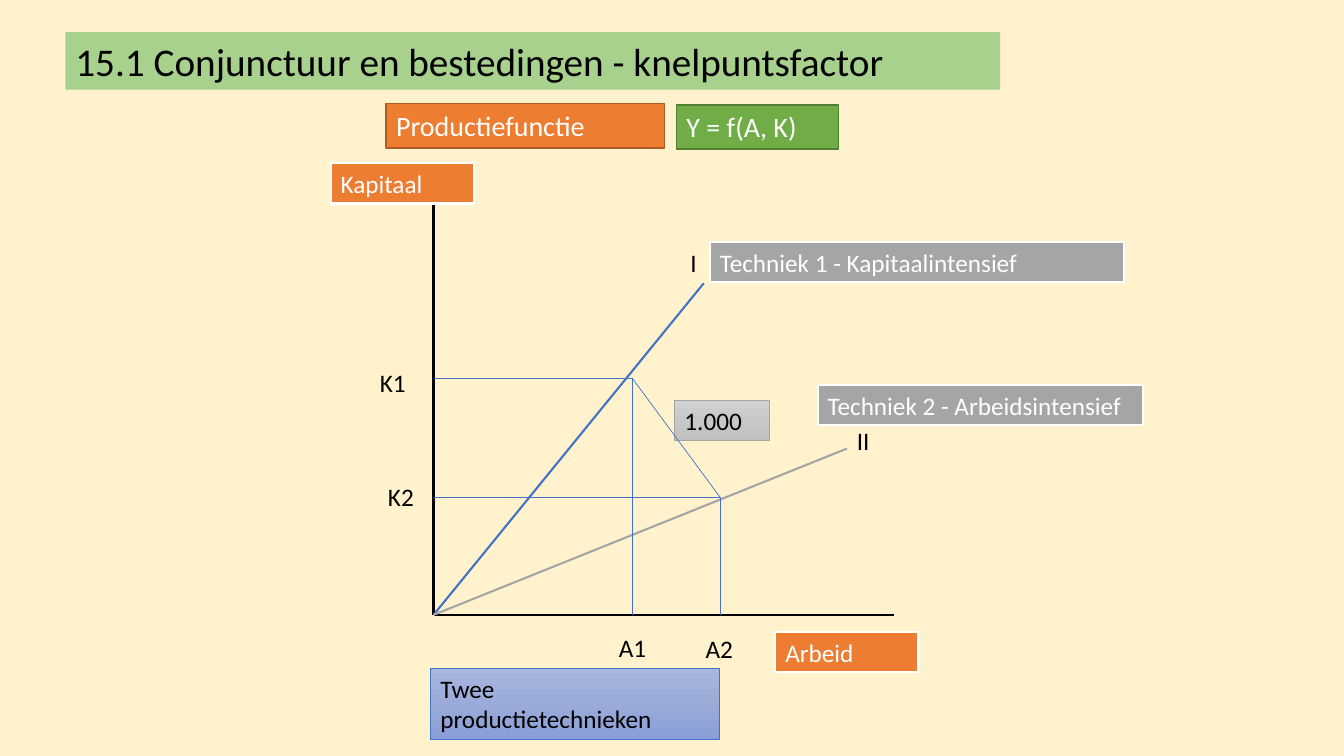
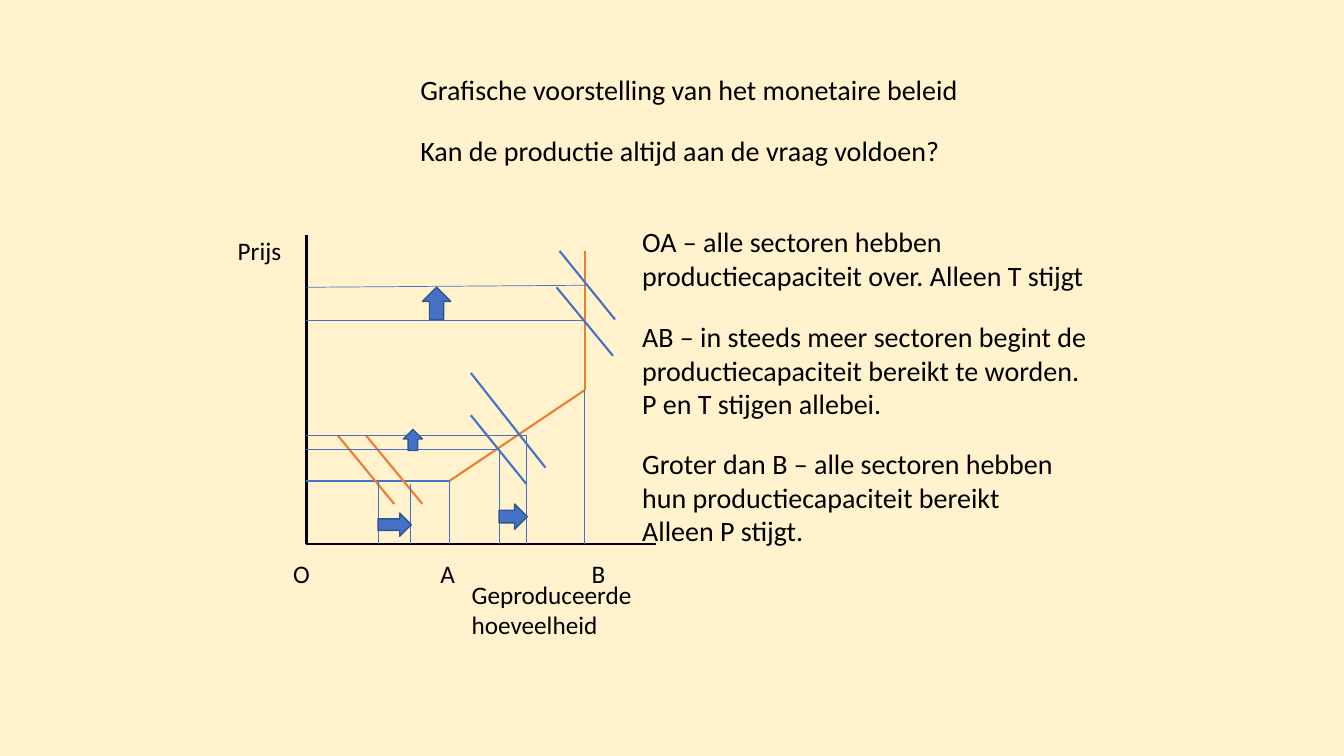
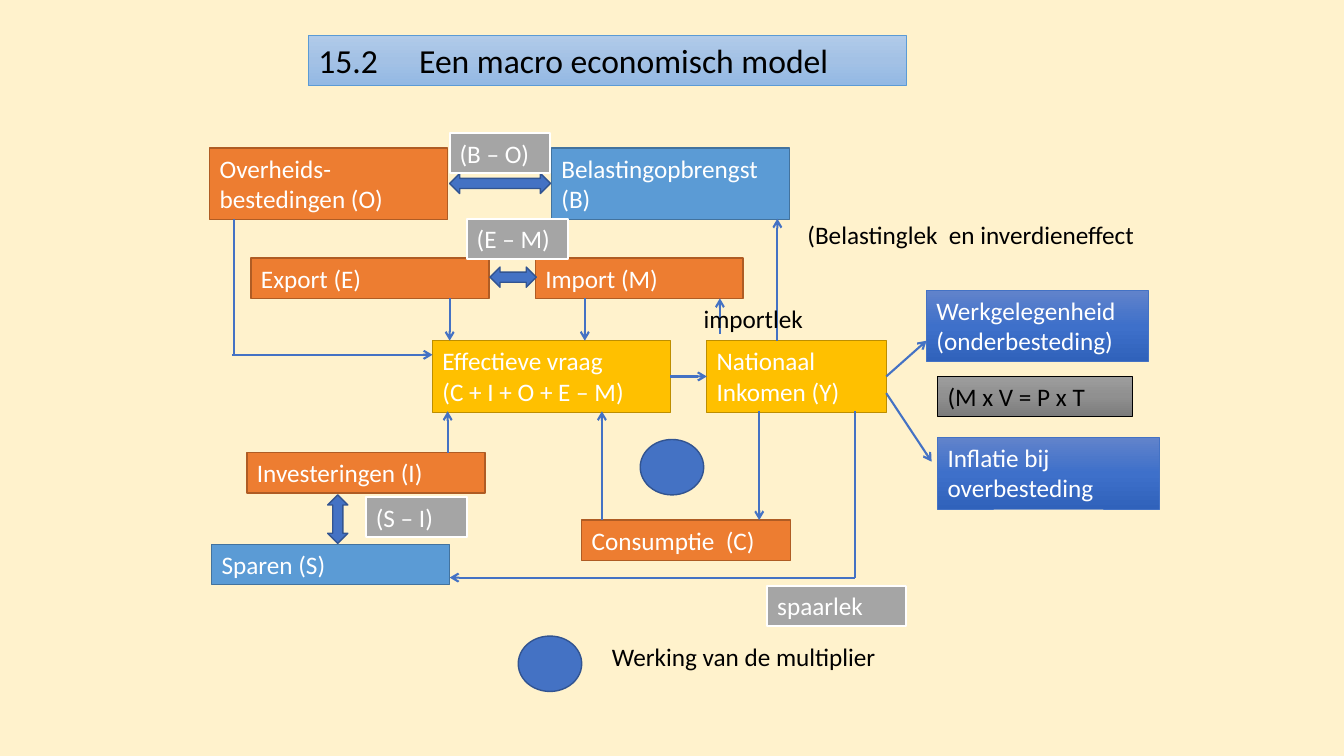
from copy import deepcopy
from pptx import Presentation
from pptx.dml.color import RGBColor
from pptx.enum.shapes import MSO_CONNECTOR, MSO_SHAPE
from pptx.enum.text import MSO_ANCHOR, MSO_AUTO_SIZE, PP_ALIGN
from pptx.oxml.ns import qn
from pptx.util import Inches, Pt
from lxml.etree import SubElement

FONT = "Calibri"
BLACK, WHITE, BLUE, ORANGE, GREY = "000000", "FFFFFF", "4472C4", "ED7D31", "A5A5A5"
PLAIN = (None, None, 0, BLACK)
ACTION = (ORANGE, "AF5C24", 1, WHITE)
AXIS = (ORANGE, WHITE, 1.5, WHITE)
LABEL = (GREY, WHITE, 1.5, WHITE)
FUNCTION = ("70AD47", "538035", 1, WHITE)
TITLE = ("A9D18E", None, 0, BLACK)
CORE = ("FFC000", "BD8E00", 1, WHITE)
FLOW = ("5B9BD5", "43739E", 1, WHITE)
MARK = (BLUE, "325491", 1, WHITE)
SOFT = (("A8B7DF", "9AABD9", "889ED7"), BLUE, 0.5, BLACK)
SILVER = (("D2D2D2", "C8C8C8", "C0C0C0"), GREY, 0.5, BLACK)
BANNER = (("B1CBE9", "A3C1E5", "93B9E4"), "5B9BD5", 0.5, BLACK)
RESULT = (("6183CB", "3E70CA", "3062BB"), BLUE, 0.5, WHITE)
FORMULA = (("9D9D9D", "909090", "7C7C7C"), BLACK, 0.5, BLACK)


def box(page, at, style, text="", size=18, kind=MSO_SHAPE.RECTANGLE):
    fill, edge, width, ink = style
    place = [Inches(v) for v in at]
    if fill is None:
        item = page.shapes.add_textbox(*place)
    else:
        item = page.shapes.add_shape(kind, *place)
        item.shadow.inherit = False
        if isinstance(fill, tuple):
            item.fill.gradient()
            item.fill.gradient_angle = 270
            stops = item._element.spPr.find(".//" + qn("a:gsLst"))
            stops.insert(1, deepcopy(stops[0]))
            for stop, hue, spot in zip(item.fill.gradient_stops, fill, (0, 0.5, 1)):
                stop.color.rgb = RGBColor.from_string(hue)
                stop.position = spot
        else:
            item.fill.solid()
            item.fill.fore_color.rgb = RGBColor.from_string(fill)
        if edge:
            item.line.color.rgb = RGBColor.from_string(edge)
            item.line.width = Pt(width)
        else:
            item.line.fill.background()
    if text:
        frame = item.text_frame
        frame.text = text
        frame.word_wrap = True
        frame.auto_size = MSO_AUTO_SIZE.SHAPE_TO_FIT_TEXT
        frame.vertical_anchor = MSO_ANCHOR.TOP
        for para in frame.paragraphs:
            para.alignment = PP_ALIGN.LEFT
            para.font.name = FONT
            para.font.size = Pt(size)
            para.font.color.rgb = RGBColor.from_string(ink)
    return item


def wire(page, ends, hue=BLUE, width=1.5, tip=False):
    item = page.shapes.add_connector(MSO_CONNECTOR.STRAIGHT, *[Inches(v) for v in ends])
    item.line.color.rgb = RGBColor.from_string(hue)
    item.line.width = Pt(width)
    if tip:
        SubElement(item.line._get_or_add_ln(), qn("a:tailEnd"), type="arrow")
    SubElement(item._element.spPr, qn("a:effectLst"))
    return item


deck = Presentation()
deck.slide_width, deck.slide_height = Inches(13.33), Inches(7.5)
ground = deck.slide_master.background.fill
ground.solid()
ground.fore_color.rgb = RGBColor.from_string("FFF2CC")
blank = deck.slide_layouts[6]

page = deck.slides.add_slide(blank)
left, base = 4.3, 6.1
wire(page, (left, 1.94, left, base), BLACK)
wire(page, (left, base, 8.87, base), BLACK)
wire(page, (left, base, 6.98, 2.81))
wire(page, (left, base, 8.4, 4.45), GREY)
first, second = (6.27, 3.75), (7.14, 4.93)
for x, y in (first, second):
    wire(page, (left, y, x, y), width=0.5)
    wire(page, (x, y, x, base), width=0.5)
for x, y, text in [
    (3.67, 3.59, "K1"), (3.75, 4.73, "K2"), (6.04, 6.22, "A1"),
    (6.9, 6.23, "A2"), (6.75, 2.4, "I"), (8.4, 4.17, "II"),
]:
    box(page, (x, y, 0.47, 0.4), PLAIN, text)
for at, style, text, size in [
    ((3.28, 1.62, 1.42, 0.4), AXIS, "Kapitaal", 18),
    ((7.69, 6.27, 1.42, 0.4), AXIS, "Arbeid", 18),
    ((4.27, 6.63, 2.87, 0.71), SOFT, "Twee productietechnieken", 18),
    ((7.04, 2.4, 4.11, 0.4), LABEL, "Techniek 1 - Kapitaalintensief", 18),
    ((8.11, 3.82, 3.23, 0.4), LABEL, "Techniek 2 - Arbeidsintensief", 18),
    ((6.69, 3.97, 0.94, 0.4), SILVER, "1.000", 18),
    ((3.83, 1.03, 2.76, 0.44), ACTION, "Productiefunctie", 20),
    ((6.71, 1.04, 1.61, 0.44), FUNCTION, "Y = f(A, K)", 20),
    ((0.65, 0.32, 9.27, 0.57), TITLE, "15.1 Conjunctuur en bestedingen - knelpuntsfactor", 28),
]:
    box(page, at, style, text, size)
wire(page, first + second, width=0.5)

page = deck.slides.add_slide(blank)
left, base = 3.04, 5.4
wire(page, (left, 2.33, left, base), BLACK)
wire(page, (left, base, 6.51, base), BLACK)
wire(page, (left, 4.77, 4.46, 4.77))
wire(page, (4.46, 4.77, 5.8, 3.87), ORANGE)
wire(page, (5.8, 3.87, 5.8, 2.49), ORANGE)
for at, text, size in [
    ((4.07, 0.67, 5.83, 0.44), "Grafische voorstelling van het monetaire beleid", 20),
    ((4.07, 1.28, 5.83, 0.44), "Kan de productie altijd aan de vraag voldoen?", 20),
    ((2.26, 2.29, 1.1, 0.4), "Prijs", 18),
    ((4.58, 5.7, 2.44, 0.71), "Geproduceerde\nhoeveelheid", 18),
    ((2.81, 5.49, 0.5, 0.4), "O", 18),
    ((4.27, 5.49, 0.5, 0.4), "A", 18),
    ((5.77, 5.49, 0.5, 0.4), "B", 18),
    ((6.27, 2.18, 5.12, 0.77),
     "OA – alle sectoren hebben productiecapaciteit over. Alleen T stijgt", 20),
    ((6.27, 3.12, 5.12, 1.11),
     "AB – in steeds meer sectoren begint de productiecapaciteit bereikt te worden.\n"
     "P en T stijgen allebei.", 20),
    ((6.27, 4.38, 4.72, 1.11),
     "Groter dan B – alle sectoren hebben hun productiecapaciteit bereikt\n"
     "Alleen P stijgt.", 20),
]:
    box(page, at, PLAIN, text, size)
for x, y, run, drop, hue in [
    (3.35, 4.32, 0.56, 0.68, ORANGE), (3.63, 4.32, 0.56, 0.68, ORANGE),
    (4.67, 4.12, 0.55, 0.68, BLUE), (4.67, 3.7, 0.74, 0.94, BLUE),
    (5.52, 2.85, 0.56, 0.68, BLUE), (5.55, 2.49, 0.55, 0.68, BLUE),
]:
    wire(page, (x, y, x + run, y + drop), hue)
for x, y in [(3.75, 4.77), (4.07, 4.8), (4.46, 4.77), (4.95, 4.46), (5.22, 4.32), (5.8, 3.87)]:
    wire(page, (x, y, x, base), width=0.5)
for x, y, end in [(4.95, 4.46, 4.46), (5.22, 4.32, 4.32), (5.8, 3.18, 3.18), (5.8, 2.83, 2.85)]:
    wire(page, (x, y, left, end), width=0.5)
for at, kind in [
    ((3.75, 5.09, 0.33, 0.23), MSO_SHAPE.RIGHT_ARROW),
    ((4.95, 5, 0.28, 0.25), MSO_SHAPE.RIGHT_ARROW),
    ((4, 4.26, 0.19, 0.21), MSO_SHAPE.UP_ARROW),
    ((4.19, 2.85, 0.28, 0.32), MSO_SHAPE.UP_ARROW),
]:
    box(page, at, MARK, kind=kind)

page = deck.slides.add_slide(blank)
box(page, (3.06, 0.35, 5.93, 0.5), BANNER, "15.2\tEen macro economisch model", 24)
demand = box(page, (4.29, 3.38, 2.36, 0.71), CORE, "Effectieve vraag\n(C + I + O + E – M)")
income = box(page, (7.01, 3.38, 1.78, 0.71), CORE, "Nationaal\nInkomen (Y)")
for at, style, text in [
    ((5.77, 5.16, 2.07, 0.4), ACTION, "Consumptie  (C)"),
    ((2.1, 5.4, 2.36, 0.4), FLOW, "Sparen (S)"),
    ((2.45, 4.49, 2.36, 0.4), ACTION, "Investeringen (I)"),
    ((2.08, 1.47, 2.36, 0.71), ACTION, "Overheids-bestedingen (O)"),
    ((2.49, 2.56, 2.36, 0.4), ACTION, "Export (E)"),
    ((9.3, 4.34, 2.2, 0.71), RESULT, "Inflatie bij overbesteding"),
    ((9.19, 2.88, 2.2, 0.71), RESULT, "Werkgelegenheid\n(onderbesteding)"),
    ((5.31, 2.56, 2.06, 0.4), ACTION, "Import (M)"),
    ((5.47, 1.47, 2.36, 0.71), FLOW, "Belastingopbrengst (B)"),
]:
    box(page, at, style, text)
for x, y in [(6.35, 4.36), (5.14, 6.31)]:
    box(page, (x, y, 0.63, 0.55), MARK, kind=MSO_SHAPE.OVAL)
for ends in [
    (2.3, 3.52, 4.29, 3.52), (8.79, 3.9, 9.24, 4.58), (8.48, 5.73, 4.46, 5.73),
    (5.97, 5.16, 5.97, 4.08), (7.53, 4.08, 7.53, 5.16), (7.71, 3.38, 7.71, 2.17),
    (7.14, 3.31, 7.14, 2.96), (4.44, 4.49, 4.44, 4.08), (5.8, 2.96, 5.8, 3.38),
    (4.46, 2.96, 4.46, 3.38),
]:
    wire(page, ends, tip=True)
wire(page, (8.48, 5.73, 8.48, 4.08))
wire(page, (2.32, 3.52, 2.32, 2.17))
link = wire(page, (6.65, 3.73, 7.01, 3.73), tip=True)
link.begin_connect(demand, 3)
link.end_connect(income, 1)
link = wire(page, (8.79, 3.73, 9.19, 3.38), tip=True)
link.begin_connect(income, 3)
for at, turn in [((4.46, 1.72, 1, 0.2), 0), ((4.86, 2.65, 0.46, 0.2), 0), ((3.11, 5.05, 0.48, 0.2), 90)]:
    box(page, at, MARK, kind=MSO_SHAPE.LEFT_RIGHT_ARROW).rotation = turn
for at, style, text in [
    ((4.46, 1.32, 1, 0.4), LABEL, "(B – O)"),
    ((4.63, 2.17, 1, 0.4), LABEL, "(E – M)"),
    ((3.63, 4.93, 1, 0.4), LABEL, "(S – I)"),
    ((7.61, 5.81, 1.38, 0.4), LABEL, "spaarlek"),
    ((9.3, 3.73, 1.93, 0.4), FORMULA, "(M x V = P x T"),
    ((7.91, 2.13, 3.48, 0.4), PLAIN, "(Belastinglek  en inverdieneffect"),
    ((6.88, 2.96, 1.47, 0.4), PLAIN, "importlek"),
    ((5.97, 6.31, 3.45, 0.4), PLAIN, "Werking van de multiplier"),
]:
    box(page, at, style, text)

deck.save("out.pptx")
